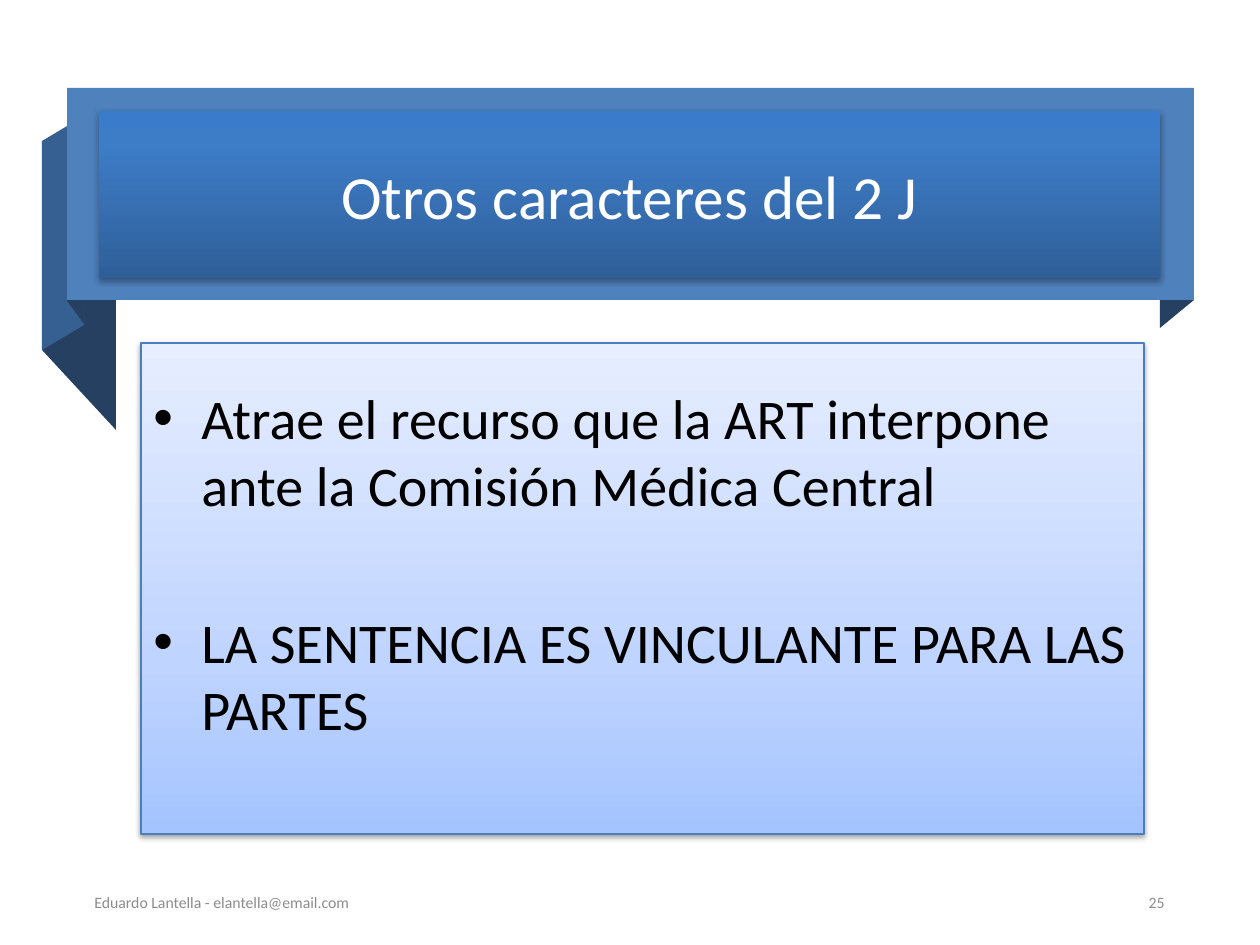
from lxml.etree import SubElement
from pptx import Presentation
from pptx.dml.color import RGBColor
from pptx.enum.shapes import MSO_SHAPE as Shape
from pptx.enum.text import MSO_ANCHOR as Anchor, MSO_AUTO_SIZE as AutoSize, PP_ALIGN as Align
from pptx.oxml.ns import qn
from pptx.util import Emu, Pt

EMU_PER_PX = 914400 / 126
FONT = "Calibri"
TITLE_GRADIENT = [(0, "2F5F99"), (80, "3D7CC7"), (100, "3A7CCB")]
BODY_GRADIENT = [(0, "A4C4FF"), (35, "BFD4FF"), (100, "E6EEFF")]
RIBBON_FOLDS = [
    ("254061", [(116, 430), (42, 350), (42, 141), (116, 220)]),
    ("376092", [(84, 325), (42, 350), (42, 141), (84, 116)]),
    ("254061", [(84, 324), (67, 301), (67, 88), (84, 112)]),
    ("254061", [(1194, 300), (1160, 328), (1160, 115), (1194, 88)]),
]
BULLETS = [
    ("Atrae el recurso que la ART interpone ante la Comisión Médica Central", 6.4),
    ("LA SENTENCIA ES VINCULANTE PARA LAS PARTES", 51.5),
]


def px(length):
    return Emu(round(length * EMU_PER_PX))


def color(value):
    return RGBColor.from_string(value)


def place(shape, box):
    for name, length in zip(("left", "top", "width", "height"), box):
        setattr(shape, name, px(length))


def set_attributes(target, values):
    for name, value in values.items():
        setattr(target, name, value)


def fill_plain(shape, fill):
    shape.fill.solid()
    shape.fill.fore_color.rgb = color(fill)
    shape.line.fill.background()
    shape.shadow.inherit = False


def fill_gradient(shape, stops):
    shape.fill.gradient()
    shape.fill.gradient_angle = 90
    stop_list = shape._element.spPr.find(qn("a:gradFill")).find(qn("a:gsLst"))
    stop_list.clear()
    for position, value in stops:
        stop = SubElement(stop_list, qn("a:gs"), pos=str(position * 1000))
        SubElement(stop, qn("a:srgbClr"), val=value)


def add_shadow(shape, opacity, distance):
    shape.shadow.inherit = False
    effects = shape._element.spPr.find(qn("a:effectLst"))
    shadow = SubElement(effects, qn("a:outerShdw"), blurRad=str(Pt(3.1)),
                        dist=str(Pt(distance)), dir="5400000", rotWithShape="0")
    black = SubElement(shadow, qn("a:srgbClr"), val="000000")
    SubElement(black, qn("a:alpha"), val=str(opacity * 1000))


def write(paragraph, text, size, text_color, **layout):
    set_attributes(paragraph, layout)
    run = paragraph.add_run()
    run.text = text
    set_attributes(run.font, {"name": FONT, "size": Pt(size)})
    run.font.color.rgb = color(text_color)


def set_bullet(paragraph):
    properties = paragraph._p.get_or_add_pPr()
    properties.set("marL", str(px(48)))
    properties.set("indent", str(-px(48)))
    SubElement(properties, qn("a:buFont"), typeface="Arial")
    SubElement(properties, qn("a:buChar"), char="•")


def add_fold(slide, fill, points):
    corners = [(px(x), px(y)) for x, y in points]
    builder = slide.shapes.build_freeform(*corners[0], scale=1.0)
    builder.add_line_segments(corners[1:], close=True)
    fill_plain(builder.convert_to_shape(), fill)


def add_band(slide):
    band = slide.shapes.add_shape(Shape.RECTANGLE, 0, 0, 0, 0)
    place(band, (67, 88, 1127, 212))
    fill_plain(band, "4F81BD")


def format_title(slide, text):
    title = slide.shapes.title
    place(title, (99, 111, 1061, 167))
    fill_gradient(title, TITLE_GRADIENT)
    add_shadow(title, 35, 1.8)
    set_attributes(title.text_frame, {"vertical_anchor": Anchor.MIDDLE,
                                      "auto_size": AutoSize.NONE, "word_wrap": True})
    write(title.text_frame.paragraphs[0], text, 35, "FFFFFF", alignment=Align.CENTER)
    slide.shapes._spTree.append(title._element)


def add_body(slide):
    body = slide.shapes.add_shape(Shape.RECTANGLE, 0, 0, 0, 0)
    place(body, (141, 343, 1003, 491))
    fill_gradient(body, BODY_GRADIENT)
    body.line.color.rgb = color("4B7EBC")
    body.line.width = Pt(0.75)
    add_shadow(body, 38, 1.6)
    frame = body.text_frame
    set_attributes(frame, {"vertical_anchor": Anchor.MIDDLE, "word_wrap": True,
                           "margin_bottom": px(58)})
    for index, (text, gap) in enumerate(BULLETS):
        paragraph = frame.add_paragraph() if index else frame.paragraphs[0]
        write(paragraph, text, 32, "000000", alignment=Align.LEFT, space_before=Pt(gap))
        set_bullet(paragraph)


def add_footer(slide, text, box, alignment):
    footer = slide.shapes.add_textbox(0, 0, 0, 0)
    place(footer, box)
    set_attributes(footer.text_frame, {"vertical_anchor": Anchor.MIDDLE, "word_wrap": True})
    write(footer.text_frame.paragraphs[0], text, 9, "8C8C8C", alignment=alignment)


def main():
    presentation = Presentation()
    set_attributes(presentation, {"slide_width": px(1260), "slide_height": px(945)})
    slide = presentation.slides.add_slide(presentation.slide_layouts[5])
    for fill, points in RIBBON_FOLDS:
        add_fold(slide, fill, points)
    add_band(slide)
    format_title(slide, "Otros caracteres del 2 J")
    add_body(slide)
    add_footer(slide, "Eduardo Lantella - elantella@email.com", (82, 880, 698, 44), Align.LEFT)
    add_footer(slide, "25", (1106, 880, 71, 44), Align.RIGHT)
    presentation.save("out.pptx")


if __name__ == "__main__":
    main()
